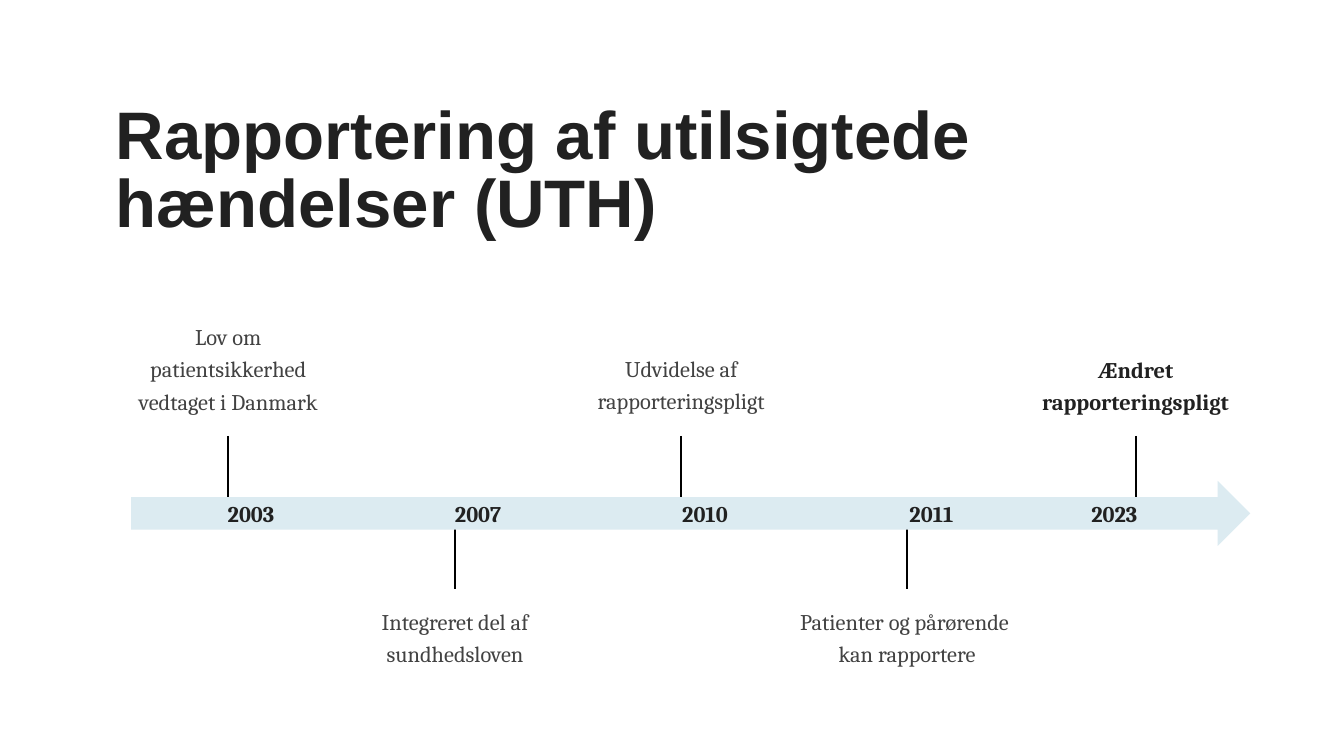
"""Build a timeline slide on the reporting of adverse events."""
import pptx
import pptx.dml.color
import pptx.enum.shapes
import pptx.enum.text
import pptx.oxml.xmlchemy
import pptx.util
from pptx.util import Inches

COLORS = {"dark": "212121", "body": "424242", "arrow": "DCEBF1", "line": "000000"}
ALIGN = pptx.enum.text.PP_ALIGN
ANCHOR = pptx.enum.text.MSO_ANCHOR
AUTO = pptx.enum.text.MSO_AUTO_SIZE
element = pptx.oxml.xmlchemy.OxmlElement


def rgb(name):
    return pptx.dml.color.RGBColor.from_string(COLORS[name])


def write(sp, text, size, font, color, bold, align, spacing, anchor, auto):
    tf = sp.text_frame
    tf.word_wrap = True
    tf.auto_size = auto
    tf.vertical_anchor = anchor
    tf.margin_left = tf.margin_right = tf.margin_top = tf.margin_bottom = Inches(0.06)
    tf.text = text
    for p in tf.paragraphs:
        p.alignment = align
        p.line_spacing = spacing
        for r in p.runs:
            r.font.size = pptx.util.Pt(size)
            r.font.name = font
            r.font.bold = bold
            r.font.color.rgb = rgb(color)


prs = pptx.Presentation()
prs.slide_width, prs.slide_height = Inches(26.67), Inches(15)
s = prs.slides.add_slide(prs.slide_layouts[6])

for x, y in [(22.54, 8.65), (18, 10.45), (13.52, 8.65), (9.03, 10.45), (4.53, 8.65)]:
    line = s.shapes.add_connector(pptx.enum.shapes.MSO_CONNECTOR.STRAIGHT,
                                  Inches(x), Inches(y), Inches(x), Inches(y + 1.24))
    line.line.color.rgb = rgb("line")
    line.line.width = pptx.util.Pt(2.5)
    line._element.spPr.append(element("a:effectLst"))

title = s.shapes.add_textbox(Inches(2.24), Inches(2.01), Inches(22.95), Inches(1.82))
write(title, "Rapportering af utilsigtede hændelser (UTH)", 96, "Arial", "dark", True,
      ALIGN.LEFT, 0.85, ANCHOR.TOP, AUTO.NONE)

arrow = s.shapes.add_shape(pptx.enum.shapes.MSO_SHAPE.RIGHT_ARROW,
                           Inches(2.6), Inches(9.54), Inches(22.21), Inches(1.29))
arrow.shadow.inherit = False
arrow.fill.solid()
arrow.fill.fore_color.rgb = rgb("arrow")
arrow.line.fill.background()
years = ["2003", "2007", "2010", "2011", "2023"]
write(arrow, "\t\t\t\t".join(years), 32, "Cambria", "dark", True,
      ALIGN.CENTER, 1.0, ANCHOR.MIDDLE, AUTO.SHAPE_TO_FIT_TEXT)
tabs = element("a:tabLst")
for k in range(1, 20):
    if k not in (1, 6, 11):
        tab = element("a:tab")
        tab.set("pos", str(int(Inches(4.51 * k / 5))))
        tab.set("algn", "l")
        tabs.append(tab)
arrow.text_frame.paragraphs[0]._p.get_or_add_pPr().append(tabs)

events = [
    (2.6, 6.24, 3.86, 2.05, "Lov om patientsikkerhed vedtaget i Danmark", "body", False),
    (7.34, 11.9, 3.38, 1.4, "Integreret del af sundhedsloven", "body", False),
    (11.21, 6.88, 4.62, 1.4, "Udvidelse af rapporteringspligt", "body", False),
    (15.21, 11.9, 5.58, 1.4, "Patienter og pårørende \nkan rapportere", "body", False),
    (20.43, 6.89, 4.21, 1.4, "Ændret rapporteringspligt", "dark", True),
]
for x, y, w, h, text, color, bold in events:
    sp = s.shapes.add_textbox(Inches(x), Inches(y), Inches(w), Inches(h))
    write(sp, text, 32, "Cambria", color, bold,
          ALIGN.CENTER, 1.2, ANCHOR.MIDDLE, AUTO.SHAPE_TO_FIT_TEXT)

prs.save("out.pptx")
